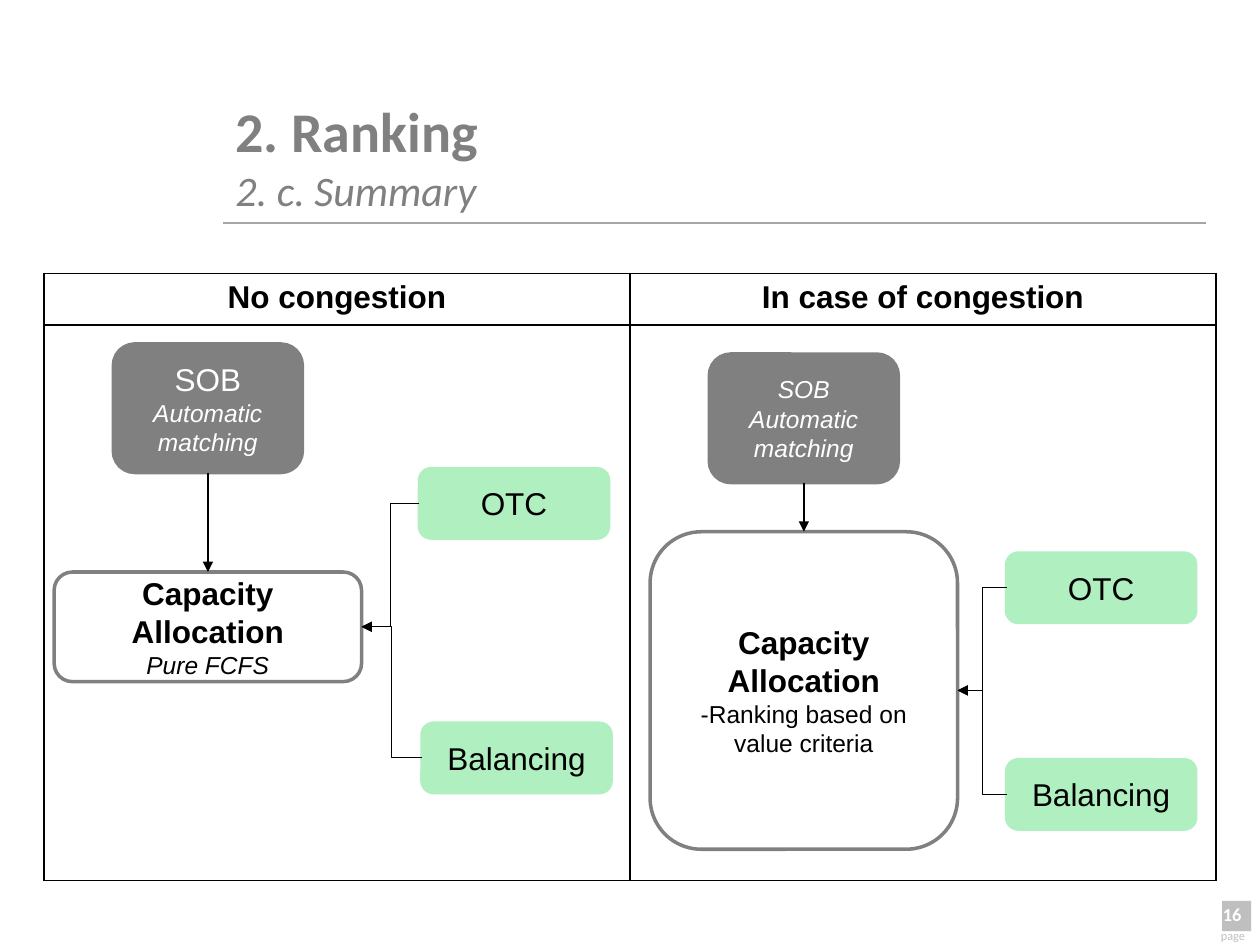
from lxml.etree import SubElement
from pptx import Presentation
from pptx.dml.color import RGBColor
from pptx.enum.shapes import MSO_CONNECTOR, MSO_SHAPE
from pptx.enum.text import MSO_ANCHOR, PP_ALIGN
from pptx.oxml.ns import qn
from pptx.util import Inches, Pt

BLACK = RGBColor(0x00, 0x00, 0x00)
WHITE = RGBColor(0xFF, 0xFF, 0xFF)
GRAY = RGBColor(0x80, 0x80, 0x80)
RULE_GRAY = RGBColor(0xA6, 0xA6, 0xA6)
PAGE_GRAY = RGBColor(0xBF, 0xBF, 0xBF)
GREEN = RGBColor(0xAF, 0xEF, 0xC0)

# Content: a run is (text, size, style), where style holds "b" and/or "i"
TITLE = [("2. Ranking", 32, "b"), ("2. c. Summary", 24, "i")]
HEADERS = ["No congestion", "In case of congestion"]
OTC = [("OTC", 18, "")]
BALANCING = [("Balancing", 18, "")]
ALLOCATION = ("Capacity Allocation", 18, "b")
MATCHING = ("Automatic matching", 14, "i")

# Each panel: box name -> (left, top, width, height), lines of text
PANELS = [
    {
        "allocation": ((0.43, 4.54, 2.44, 0.87), [ALLOCATION, ("Pure FCFS", 14, "i")]),
        "sob": ((0.9, 2.73, 1.5, 1.02), [("SOB", 18, ""), MATCHING]),
        "otc": ((3.33, 3.72, 1.5, 0.55), OTC),
        "balancing": ((3.35, 5.74, 1.5, 0.55), BALANCING),
    },
    {
        "allocation": ((5.16, 4.22, 2.44, 2.52),
                       [ALLOCATION, ("-Ranking based on value criteria", 14, "")]),
        "sob": ((5.63, 2.81, 1.5, 1.02), [("SOB", 14, "i"), MATCHING]),
        "otc": ((7.99, 4.39, 1.5, 0.55), OTC),
        "balancing": ((7.99, 6.03, 1.5, 0.55), BALANCING),
    },
]

# Box name -> (fill, line, text colour)
BOX_COLORS = {
    "allocation": (None, GRAY, BLACK),
    "sob": (GRAY, GRAY, WHITE),
    "otc": (GREEN, GREEN, BLACK),
    "balancing": (GREEN, GREEN, BLACK),
}


def add_run(paragraph, text, size, style, color, font="Arial"):
    run = paragraph.add_run()
    run.text = text
    run.font.name = font
    run.font.size = Pt(size)
    run.font.bold = "b" in style
    run.font.italic = "i" in style
    run.font.color.rgb = color


def add_text_box(slide, bounds, anchor=MSO_ANCHOR.TOP, wrap=True):
    frame = slide.shapes.add_textbox(*map(Inches, bounds)).text_frame
    frame.word_wrap = wrap
    frame.vertical_anchor = anchor
    return frame


def add_box(slide, name, bounds, lines):
    fill, outline, text_color = BOX_COLORS[name]
    shape = slide.shapes.add_shape(MSO_SHAPE.ROUNDED_RECTANGLE, *map(Inches, bounds))
    shape.shadow.inherit = False
    if fill is None:
        shape.fill.background()
    else:
        shape.fill.solid()
        shape.fill.fore_color.rgb = fill
    shape.line.color.rgb = outline
    shape.line.width = Pt(2)
    frame = shape.text_frame
    frame.word_wrap = True
    frame.vertical_anchor = MSO_ANCHOR.MIDDLE
    for index, line in enumerate(lines):
        paragraph = frame.add_paragraph() if index else frame.paragraphs[0]
        paragraph.alignment = PP_ALIGN.CENTER
        add_run(paragraph, *line, text_color)


def add_line(slide, kind, start, end, color=BLACK, arrow=True):
    connector = slide.shapes.add_connector(kind, *map(Inches, start + end))
    connector.line.color.rgb = color
    connector.line.width = Pt(0.75)
    if arrow:
        SubElement(connector.line._get_or_add_ln(), qn("a:tailEnd"), type="triangle")
    SubElement(connector._element.spPr, qn("a:effectLst"))


def top_center(bounds):
    left, top, width, height = bounds
    return left + width / 2, top


def bottom_center(bounds):
    left, top, width, height = bounds
    return left + width / 2, top + height


def left_middle(bounds):
    left, top, width, height = bounds
    return left, top + height / 2


def right_middle(bounds):
    left, top, width, height = bounds
    return left + width, top + height / 2


def format_cell(cell):
    cell.fill.solid()
    cell.fill.fore_color.rgb = WHITE
    properties = cell._tc.get_or_add_tcPr()
    for index, side in enumerate(("a:lnL", "a:lnR", "a:lnT", "a:lnB")):
        border = properties.makeelement(qn(side), {"w": str(Pt(1))})
        solid = SubElement(border, qn("a:solidFill"))
        SubElement(solid, qn("a:srgbClr"), val=str(BLACK))
        properties.insert(index, border)


def add_panel_table(slide):
    table = slide.shapes.add_table(
        2, 2, Inches(0.35), Inches(2.17), Inches(9.3), Inches(4.82)).table
    table.rows[0].height = Inches(0.41)
    table.rows[1].height = Inches(4.41)
    for cell in table.iter_cells():
        format_cell(cell)
    for column, header in enumerate(HEADERS):
        paragraph = table.cell(0, column).text_frame.paragraphs[0]
        paragraph.alignment = PP_ALIGN.CENTER
        add_run(paragraph, header, 18, "b", BLACK)


def add_page_number(slide):
    square = slide.shapes.add_shape(
        MSO_SHAPE.RECTANGLE, Inches(9.7), Inches(7.15), Inches(0.23), Inches(0.24))
    square.shadow.inherit = False
    square.fill.solid()
    square.fill.fore_color.rgb = PAGE_GRAY
    square.line.fill.background()

    number = add_text_box(slide, (9.5, 7.12, 0.45, 0.27), wrap=False).paragraphs[0]
    number.alignment = PP_ALIGN.RIGHT
    add_run(number, "16", 10.5, "b", WHITE, "Calibri")

    frame = add_text_box(slide, (9.69, 7.4, 0.25, 0.05), MSO_ANCHOR.MIDDLE)
    frame.margin_left = frame.margin_right = frame.margin_top = frame.margin_bottom = 0
    frame.paragraphs[0].alignment = PP_ALIGN.JUSTIFY
    add_run(frame.paragraphs[0], "page", 7, "", PAGE_GRAY, "Calibri")


def main():
    presentation = Presentation()
    presentation.slide_width = Inches(10)
    presentation.slide_height = Inches(7.5)
    slide = presentation.slides.add_slide(presentation.slide_layouts[6])

    # Title with its rule
    add_line(slide, MSO_CONNECTOR.STRAIGHT, (1.77, 1.77), (9.57, 1.77), RULE_GRAY, False)
    title = add_text_box(slide, (1.77, 0.76, 7.88, 0.95), MSO_ANCHOR.MIDDLE).paragraphs[0]
    for index, line in enumerate(TITLE):
        if index:
            title.add_line_break()
        add_run(title, *line, GRAY, "Calibri")

    add_page_number(slide)
    add_panel_table(slide)

    # Flow diagram in each panel
    for panel in PANELS:
        for name, (bounds, lines) in panel.items():
            add_box(slide, name, bounds, lines)
        allocation = panel["allocation"][0]
        add_line(slide, MSO_CONNECTOR.STRAIGHT,
                 bottom_center(panel["sob"][0]), top_center(allocation))
        for source in ("otc", "balancing"):
            add_line(slide, MSO_CONNECTOR.ELBOW,
                     left_middle(panel[source][0]), right_middle(allocation))

    presentation.save("out.pptx")


if __name__ == "__main__":
    main()
